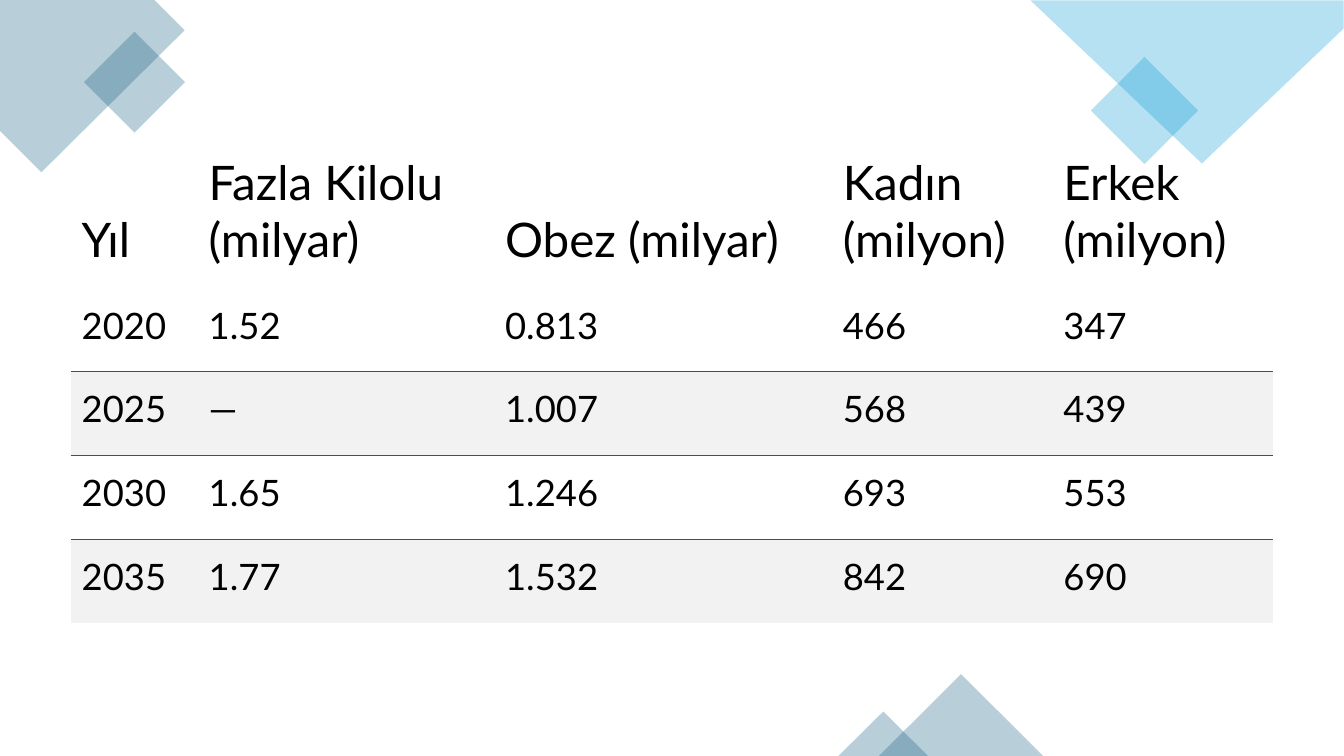
from math import cos, radians, sin

from lxml.etree import SubElement
from pptx import Presentation
from pptx.dml.color import RGBColor
from pptx.enum.shapes import MSO_SHAPE
from pptx.enum.text import MSO_ANCHOR
from pptx.oxml import parse_xml
from pptx.oxml.ns import nsdecls, qn
from pptx.util import Cm, Pt

theme = {
    "teal": "156082", "sky": "0F9ED5", "band": "F2F2F2", "ink": "000000",
    "font": "Lato", "head": Pt(34), "body": Pt(26), "alpha": 30000,
}


def tint(shape, color):
    """Give a shape a see-through fill and no outline."""
    shape.shadow.inherit = False
    shape.line.fill.background()
    shape.fill.solid()
    shape.fill.fore_color.rgb = RGBColor.from_string(theme[color])
    tone = shape.fill._xPr.find(".//" + qn("a:srgbClr"))
    SubElement(tone, qn("a:alpha"), val=str(theme["alpha"]))


def turn(point, mid, angle):
    """Turn a point about a centre and return it as lengths."""
    a, dx, dy = radians(angle), point[0] - mid[0], point[1] - mid[1]
    return (Cm(mid[0] + dx * cos(a) - dy * sin(a)),
            Cm(mid[1] + dx * sin(a) + dy * cos(a)))


deck = Presentation()
deck.slide_width, deck.slide_height = Cm(33.87), Cm(19.05)
slide = deck.slides.add_slide(deck.slide_layouts[6])
shapes = slide.shapes

# Large corner pieces: colour, rotation, centre, outline as seen
corners = [
    ("teal", 315, (1.5, 1.21),
     [(3.89, 0), (0, 0), (0, 3.3), (1.04, 4.34), (4.65, 0.76)]),
    ("sky", 180, (29.92, 2.06),
     [(33.87, 0), (25.98, 0), (30.3, 4.11), (33.87, 0.71)]),
]
for color, angle, mid, points in corners:
    spots = [turn(point, mid, -angle) for point in points]
    pen = shapes.build_freeform(*spots[0], scale=1.0)
    pen.add_line_segments(spots[1:], close=True)
    piece = pen.convert_to_shape()
    piece.rotation = angle
    tint(piece, color)

# Small diamonds and bottom peaks: kind, colour, rotation, box
accents = [
    (MSO_SHAPE.RECTANGLE, "teal", 315, (2.49, 1.17, 1.8, 1.8)),
    (MSO_SHAPE.RECTANGLE, "sky", 315, (27.89, 1.83, 1.91, 1.91)),
    (MSO_SHAPE.ISOSCELES_TRIANGLE, "teal", 0, (22.15, 16.99, 4.14, 2.06)),
    (MSO_SHAPE.ISOSCELES_TRIANGLE, "teal", 0, (21.13, 17.93, 2.26, 1.12)),
]
for kind, color, angle, box in accents:
    piece = shapes.add_shape(kind, *map(Cm, box))
    piece.rotation = angle
    tint(piece, color)

# Table data
rows = [
    ("Yıl", "Fazla Kilolu (milyar)", "Obez (milyar)",
     "Kadın (milyon)", "Erkek (milyon)"),
    ("2020", "1.52", "0.813", "466", "347"),
    ("2025", "—", "1.007", "568", "439"),
    ("2030", "1.65", "1.246", "693", "553"),
    ("2035", "1.77", "1.532", "842", "690"),
]
widths = [3.2, 7.47, 8.51, 5.56, 5.56]
heights = [3.91] + [2.11] * 4

# Table frame, with a plain style
frame = shapes.add_table(len(rows), len(widths), Cm(1.78), Cm(3.35),
                         Cm(sum(widths)), Cm(sum(heights)))
table = frame.table
table.first_row = table.horz_banding = False
style = table._tbl.tblPr.find(qn("a:tableStyleId"))
style.text = "{2D5ABB26-0587-4C30-8999-92F81FD0307C}"
for col, width in zip(table.columns, widths):
    col.width = Cm(width)
for row, height in zip(table.rows, heights):
    row.height = Cm(height)

# Cells: every second data row is banded and has a rule on top
inset = {"margin_left": Cm(0.28), "margin_top": Cm(0.28),
         "margin_right": Cm(0.28), "margin_bottom": Cm(0.53)}
rule = (f'<a:lnT {nsdecls("a")} w="12700"><a:solidFill>'
        f'<a:srgbClr val="{theme["teal"]}"/></a:solidFill></a:lnT>')
for r, texts in enumerate(rows):
    head, band = r == 0, r in (2, 4)
    form = {"name": theme["font"], "bold": False,
            "size": theme["head" if head else "body"]}
    anchor = MSO_ANCHOR.BOTTOM if head else MSO_ANCHOR.MIDDLE
    for c, text in enumerate(texts):
        cell = table.cell(r, c)
        for key, value in {**inset, "vertical_anchor": anchor}.items():
            setattr(cell, key, value)
        run = cell.text_frame.paragraphs[0].add_run()
        run.text = text
        for key, value in form.items():
            setattr(run.font, key, value)
        run.font.color.rgb = RGBColor.from_string(theme["ink"])
        if band:
            cell.fill.solid()
            cell.fill.fore_color.rgb = RGBColor.from_string(theme["band"])
            cell._tc.get_or_add_tcPr().insert(0, parse_xml(rule))
        else:
            cell.fill.background()

deck.save("out.pptx")
